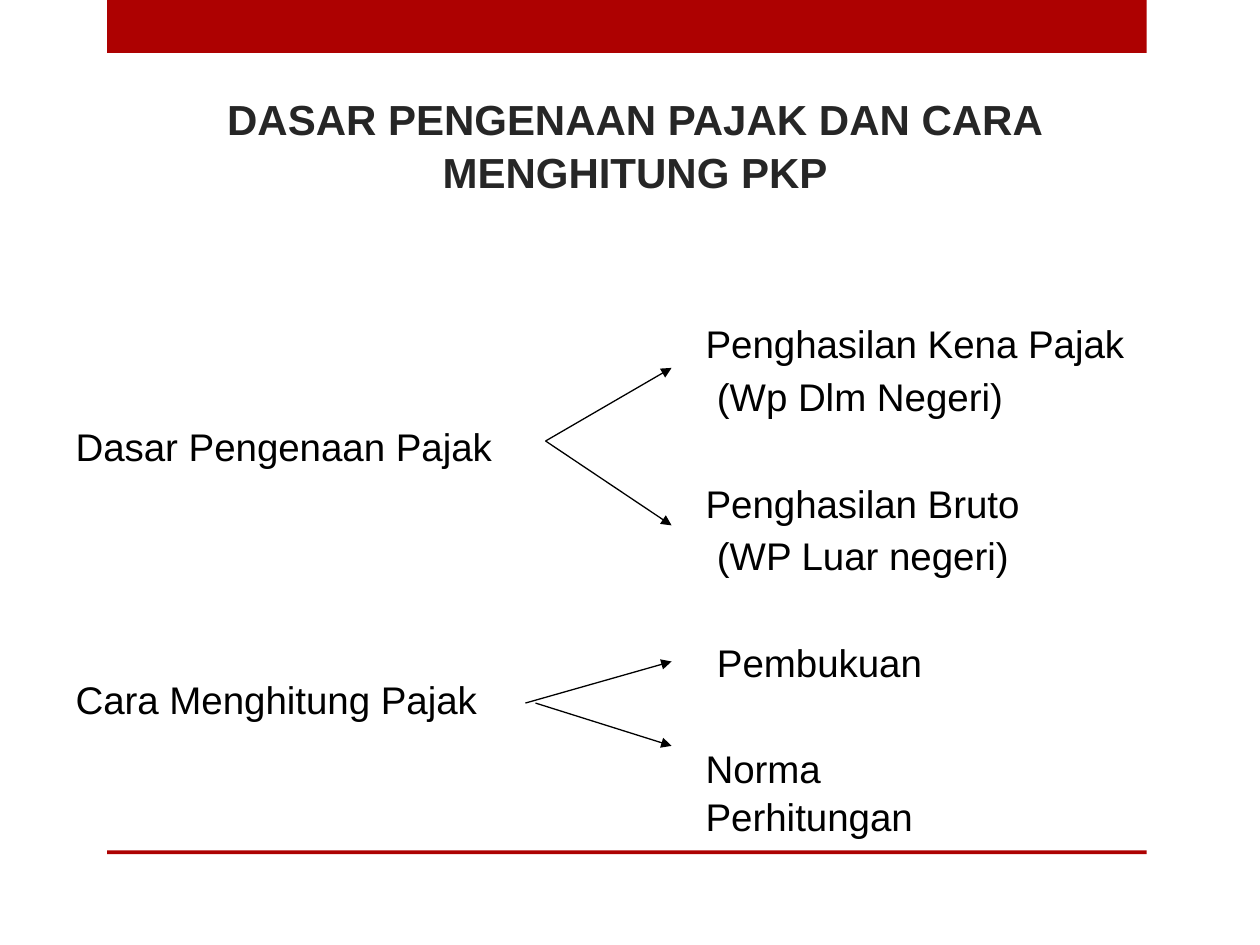
from pptx import Presentation
from pptx.dml.color import RGBColor
from pptx.enum import shapes, text
from pptx.oxml import parse_xml
from pptx.oxml.ns import nsdecls
from pptx.util import Inches, Pt

RED = RGBColor(0xAD, 0x01, 0x01)
DARK = RGBColor(0x26, 0x26, 0x26)
BLACK = RGBColor(0, 0, 0)

presentation = Presentation()
presentation.slide_width = Inches(10)
presentation.slide_height = Inches(7.5)
slide = presentation.slides.add_slide(presentation.slide_layouts[6])


def add_text(left, top, width, height, lines, size=22, color=BLACK, bold=False,
             align=text.PP_ALIGN.LEFT, anchor=text.MSO_ANCHOR.TOP):
    """Each line is (wording, left margin in inches, line spacing, space before in points)."""
    box = slide.shapes.add_textbox(Inches(left), Inches(top), Inches(width), Inches(height))
    frame = box.text_frame
    frame.word_wrap = True
    frame.vertical_anchor = anchor
    frame.margin_left = frame.margin_right = frame.margin_top = frame.margin_bottom = 0
    for index, (wording, margin, spacing, before) in enumerate(lines):
        paragraph = frame.paragraphs[0] if index == 0 else frame.add_paragraph()
        paragraph.text = wording
        paragraph.alignment = align
        paragraph.line_spacing = spacing
        paragraph.space_before = Pt(before)
        if margin:
            paragraph._p.get_or_add_pPr().set("marL", str(Inches(margin)))
        paragraph.font.name = "Arial"
        paragraph.font.size = Pt(size)
        paragraph.font.bold = bold
        paragraph.font.color.rgb = color


# Red bars at the top and bottom
for top, height in ((0, 0.42), (6.75, 0.03)):
    bar = slide.shapes.add_shape(shapes.MSO_SHAPE.RECTANGLE, Inches(0.85), Inches(top),
                                 Inches(8.25), Inches(height))
    bar.shadow.inherit = False
    bar.fill.solid()
    bar.fill.fore_color.rgb = RED
    bar.line.fill.background()

add_text(1.33, 0.75, 7.42, 0.81,
         [("DASAR PENGENAAN PAJAK DAN CARA", 0, 1.04, 0),
          ("MENGHITUNG PKP", 0, 1.04, 0)],
         size=24, color=DARK, bold=True,
         align=text.PP_ALIGN.CENTER, anchor=text.MSO_ANCHOR.BOTTOM)

# Topics on the left, their branches on the right
for topic, top in (("Dasar Pengenaan Pajak", 3.34), ("Cara Menghitung Pajak", 5.35)):
    add_text(0.59, top, 3.4, 0.38, [(topic, 0.01, 1.04, 0)])

add_text(5.59, 2.49, 3.45, 3.64, [
    ("Penghasilan Kena Pajak", 0.01, 1.14, 0),
    ("(Wp Dlm Negeri)", 0.1, 1.14, 0),
    ("Penghasilan Bruto", 0.01, 1.14, 31),
    ("(WP Luar negeri)", 0.1, 1.14, 0),
    ("Pembukuan", 0.1, 1.04, 33.5),
    ("Norma\vPerhitungan", 0.01, 1.04, 33),
])

# Arrows from topic to branch: start x, start y, end y
for start_x, start_y, end_y in ((4.33, 3.5, 2.92), (4.33, 3.5, 4.17),
                                (4.17, 5.58, 5.25), (4.25, 5.58, 5.92)):
    arrow = slide.shapes.add_connector(shapes.MSO_CONNECTOR.STRAIGHT, Inches(start_x),
                                       Inches(start_y), Inches(5.33), Inches(end_y))
    arrow.line.color.rgb = BLACK
    arrow.line.width = Pt(0.75)
    arrow.line._get_or_add_ln().append(
        parse_xml(f'<a:tailEnd {nsdecls("a")} type="triangle"/>'))
    arrow._element.spPr.append(parse_xml(f'<a:effectLst {nsdecls("a")}/>'))

presentation.save("out.pptx")
